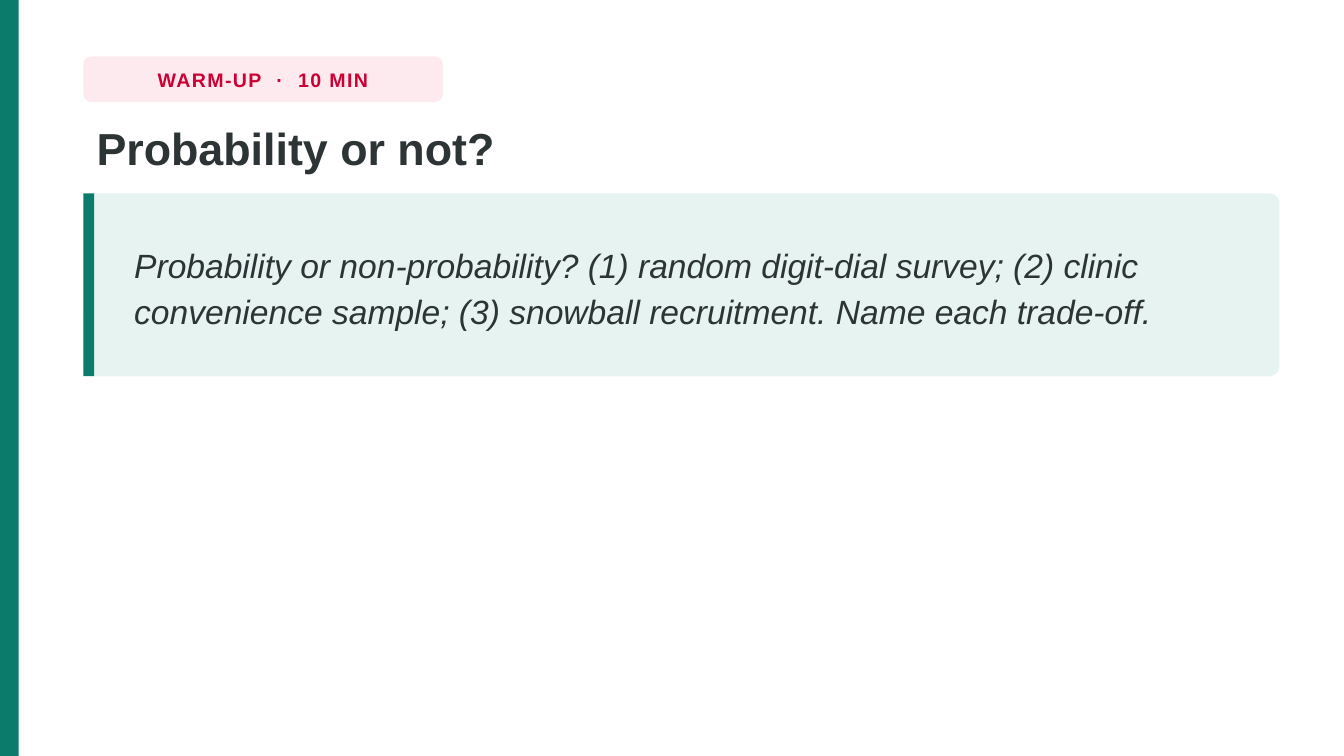
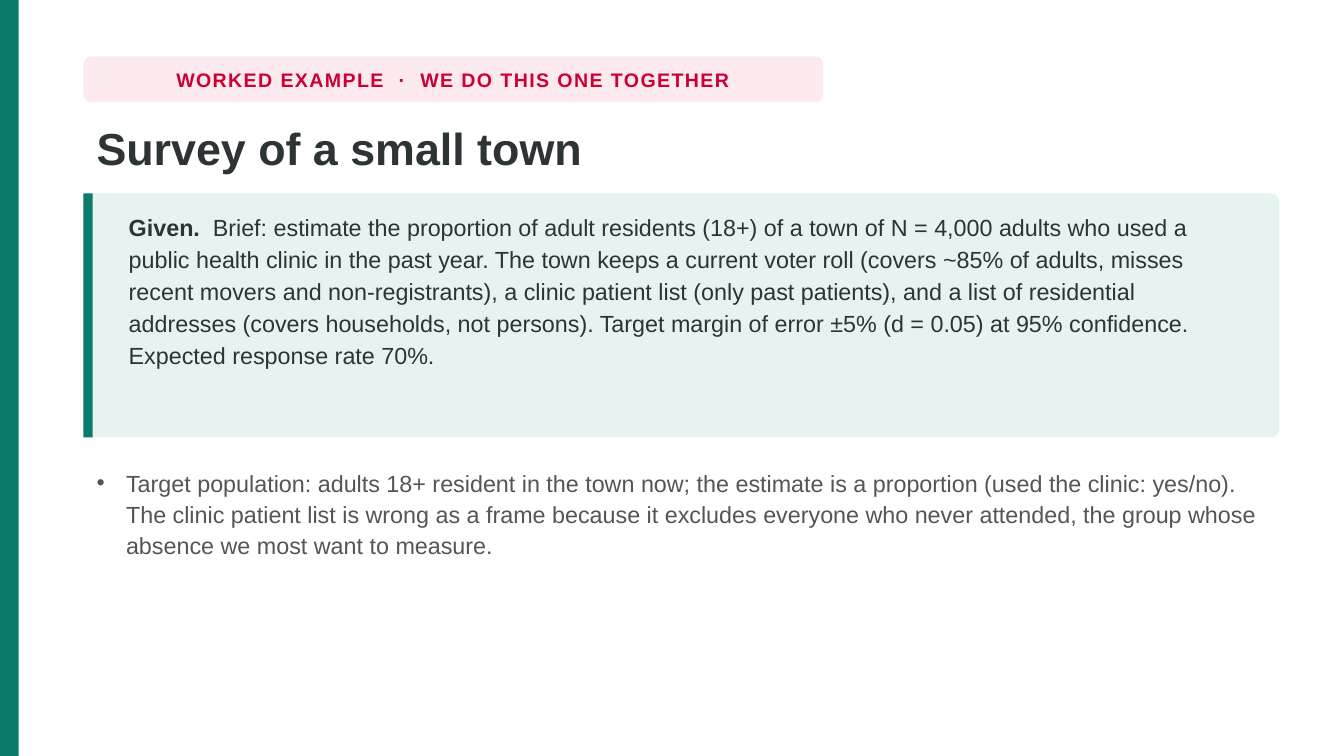
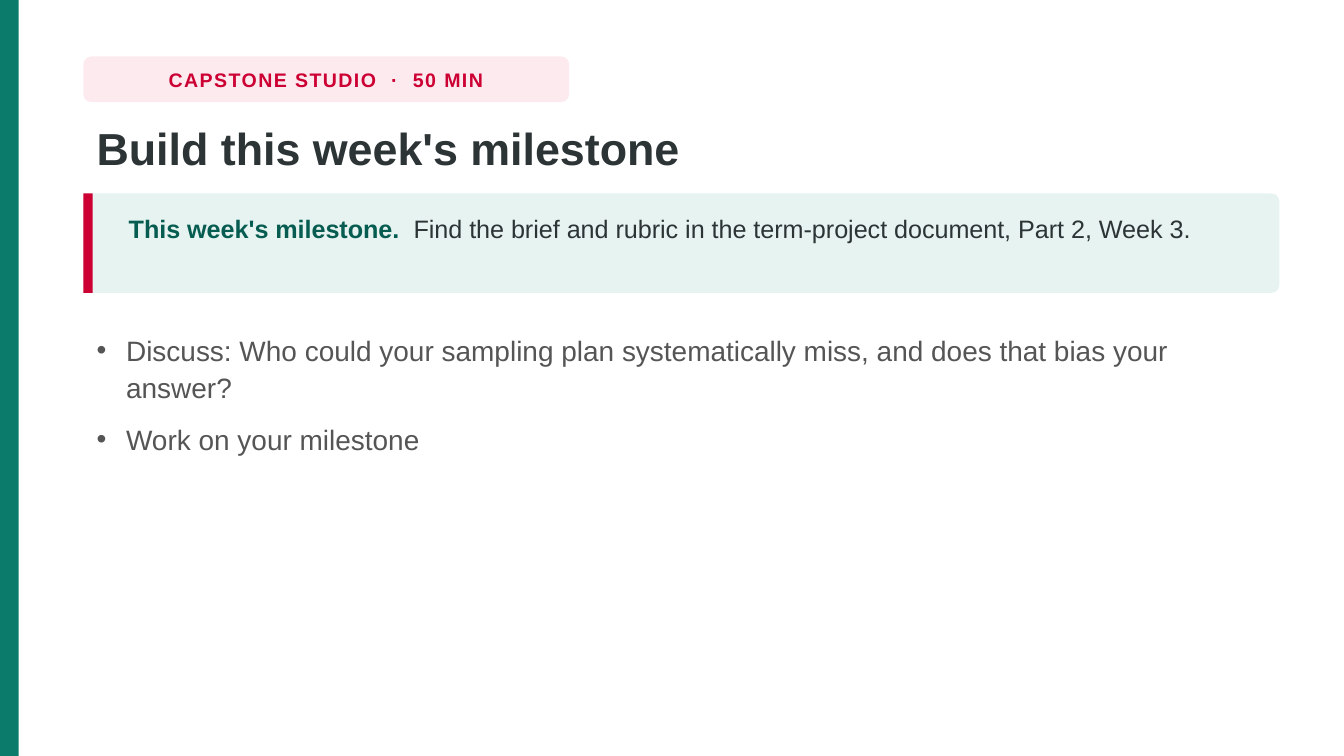
from lxml.etree import SubElement
from pptx import Presentation
from pptx.dml.color import RGBColor
from pptx.enum.shapes import MSO_SHAPE as Preset
from pptx.enum.text import MSO_ANCHOR as Anchor, PP_ALIGN as Align
from pptx.oxml.ns import qn
from pptx.util import Pt

PX = 4572  # 200 px to the inch
WIDTH, HEIGHT = 2000, 1125
LEFT, CONTENT_WIDTH = 124, 1780
CARD_TOP = 288
BULLET_INDENT, BULLET_GAP = 44, 16

FONT = "Arial"
WHITE = "FFFFFF"
GREEN = "0B7B6B"
DARK_GREEN = "065C50"
MINT = "E6F3F0"
RED = "CC0033"
PINK = "FDEAEF"
INK = "2D3436"
GREY = "555555"


def color(value):
    return RGBColor.from_string(value)


def box(left, top, width, height):
    return [length * PX for length in (left, top, width, height)]


def add_block(slide, area, fill, radius=0):
    """Add a filled rectangle, with rounded corners if a radius is given."""
    preset = Preset.ROUNDED_RECTANGLE if radius else Preset.RECTANGLE
    shape = slide.shapes.add_shape(preset, *box(*area))
    if radius:
        shape.adjustments[0] = radius / min(area[2:])
    shape.shadow.inherit = False
    shape.fill.solid()
    shape.fill.fore_color.rgb = color(fill)
    shape.line.fill.background()


def add_text(slide, area, spacing=None, anchor=Anchor.TOP, wrap=True):
    """Add a text box and return its first paragraph."""
    frame = slide.shapes.add_textbox(*box(*area)).text_frame
    frame.word_wrap = wrap
    frame.vertical_anchor = anchor
    paragraph = frame.paragraphs[0]
    if spacing:
        paragraph.line_spacing = spacing
    return paragraph


def add_run(paragraph, text, size, fill, bold=False, italic=False):
    run = paragraph.add_run()
    run.text = text
    run.font.name = FONT
    run.font.size = Pt(size)
    run.font.color.rgb = color(fill)
    run.font.bold = bold
    run.font.italic = italic
    return run


def add_pill(slide, label, width):
    area = (LEFT, 84, width, 68)
    add_block(slide, area, PINK, radius=12)
    paragraph = add_text(slide, area, anchor=Anchor.MIDDLE, wrap=False)
    paragraph.alignment = Align.CENTER
    run = add_run(paragraph, label, 10.5, RED, bold=True)
    run.font._element.set("spc", "80")


def add_card(slide, height, accent, accent_width, radius=12):
    add_block(slide, (LEFT, CARD_TOP, CONTENT_WIDTH, height), MINT, radius)
    add_block(slide, (LEFT, CARD_TOP, accent_width, height), accent)


def add_question(slide, text):
    height, margin = 272, 10
    add_card(slide, height, GREEN, accent_width=16, radius=14)
    area = (180, CARD_TOP + margin, 1670, height - 2 * margin)
    paragraph = add_text(slide, area, 1.16, Anchor.MIDDLE)
    add_run(paragraph, text, 18, INK, italic=True)


def add_brief(slide, height, lead, text, size, accent, lead_color):
    """Add a card whose text opens with a bold lead."""
    margin = 14
    add_card(slide, height, accent, accent_width=14)
    area = (172, CARD_TOP + margin, 1680, height - 2 * margin)
    paragraph = add_text(slide, area, 1.14)
    add_run(paragraph, lead + "  ", size, lead_color, bold=True)
    add_run(paragraph, text, size, INK)


def add_bullets(slide, top, size, items):
    """Stack bullets, given as (text, height) pairs, with equal gaps."""
    for text, height in items:
        paragraph = add_text(slide, (LEFT, top, CONTENT_WIDTH, height))
        properties = paragraph._p.get_or_add_pPr()
        properties.set("marL", str(BULLET_INDENT * PX))
        properties.set("indent", str(-BULLET_INDENT * PX))
        SubElement(properties, qn("a:buFont")).set("typeface", FONT)
        SubElement(properties, qn("a:buChar")).set("char", "•")
        paragraph.line_spacing = 1.12
        add_run(paragraph, text, size, GREY)
        top += height + BULLET_GAP


def add_slide(presentation, label, pill_width, title):
    """Add a slide with the side band, the pill and the title."""
    slide = presentation.slides.add_slide(presentation.slide_layouts[6])
    slide.background.fill.solid()
    slide.background.fill.fore_color.rgb = color(WHITE)
    add_block(slide, (0, 0, 28, HEIGHT), GREEN)
    add_pill(slide, label, pill_width)
    paragraph = add_text(slide, (LEFT, 168, CONTENT_WIDTH, 112), 1.02)
    add_run(paragraph, title, 24, INK, bold=True)
    return slide


def main():
    presentation = Presentation()
    presentation.slide_width = WIDTH * PX
    presentation.slide_height = HEIGHT * PX

    warm_up = add_slide(presentation, "WARM-UP  ·  10 MIN", 535, "Probability or not?")
    add_question(
        warm_up,
        "Probability or non-probability? (1) random digit-dial survey; (2) clinic "
        "convenience sample; (3) snowball recruitment. Name each trade-off.",
    )

    example = add_slide(
        presentation, "WORKED EXAMPLE  ·  WE DO THIS ONE TOGETHER", 1101,
        "Survey of a small town",
    )
    add_brief(
        example, 363, "Given.",
        "Brief: estimate the proportion of adult residents (18+) of a town of "
        "N = 4,000 adults who used a public health clinic in the past year. The town "
        "keeps a current voter roll (covers ~85% of adults, misses recent movers and "
        "non-registrants), a clinic patient list (only past patients), and a list of "
        "residential addresses (covers households, not persons). Target margin of "
        "error ±5% (d = 0.05) at 95% confidence. Expected response rate 70%.",
        12.5, GREEN, INK,
    )
    add_bullets(example, 683, 12.5, [(
        "Target population: adults 18+ resident in the town now; the estimate is a "
        "proportion (used the clinic: yes/no). The clinic patient list is wrong as a "
        "frame because it excludes everyone who never attended, the group whose "
        "absence we most want to measure.", 186,
    )])

    studio = add_slide(
        presentation, "CAPSTONE STUDIO  ·  50 MIN", 723, "Build this week's milestone"
    )
    add_brief(
        studio, 148, "This week's milestone.",
        "Find the brief and rubric in the term-project document, Part 2, Week 3.",
        13.5, RED, DARK_GREEN,
    )
    add_bullets(studio, 480, 15, [
        ("Discuss: Who could your sampling plan systematically miss, and does that "
         "bias your answer?", 117),
        ("Work on your milestone", 62),
    ])

    presentation.save("out.pptx")


if __name__ == "__main__":
    main()
